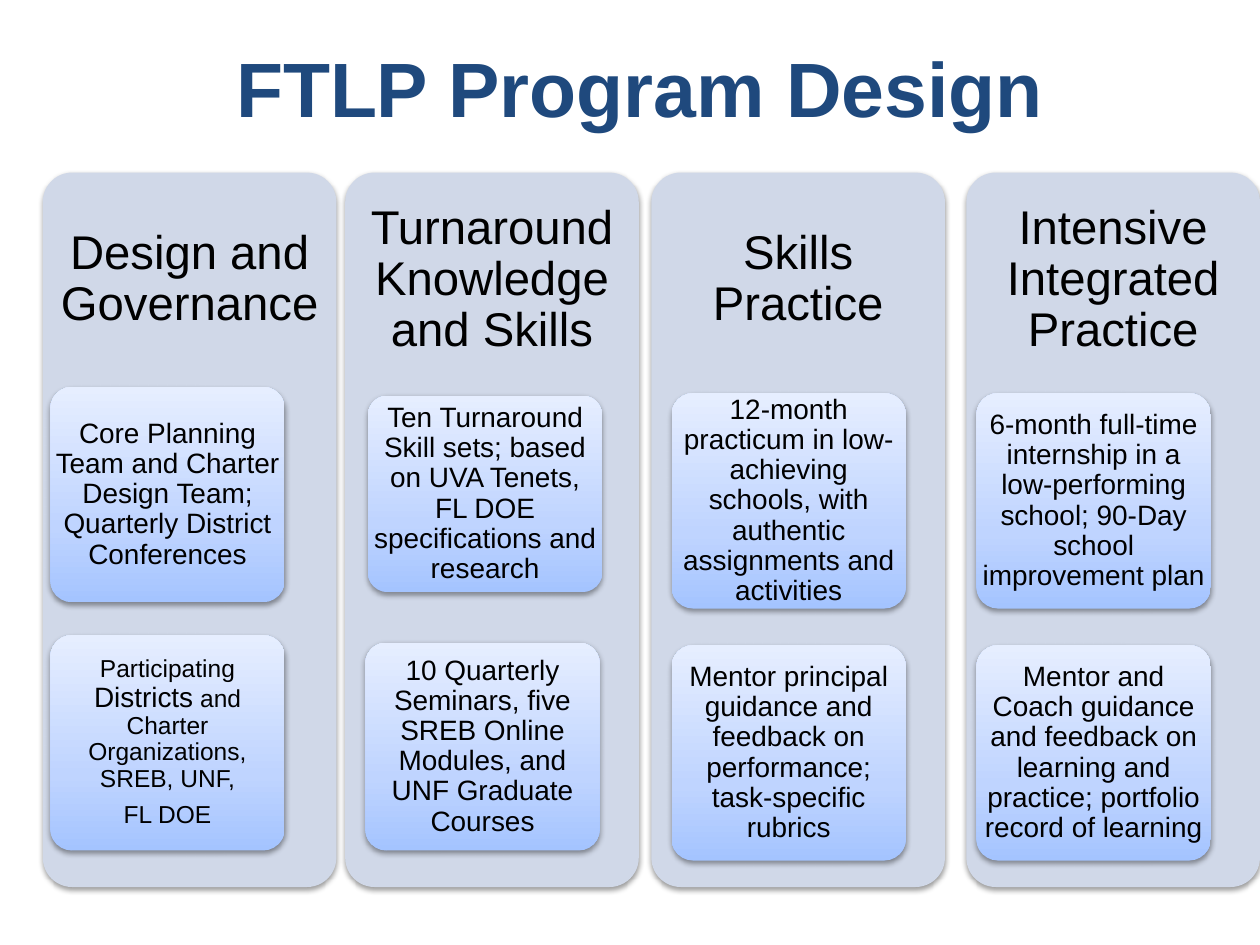
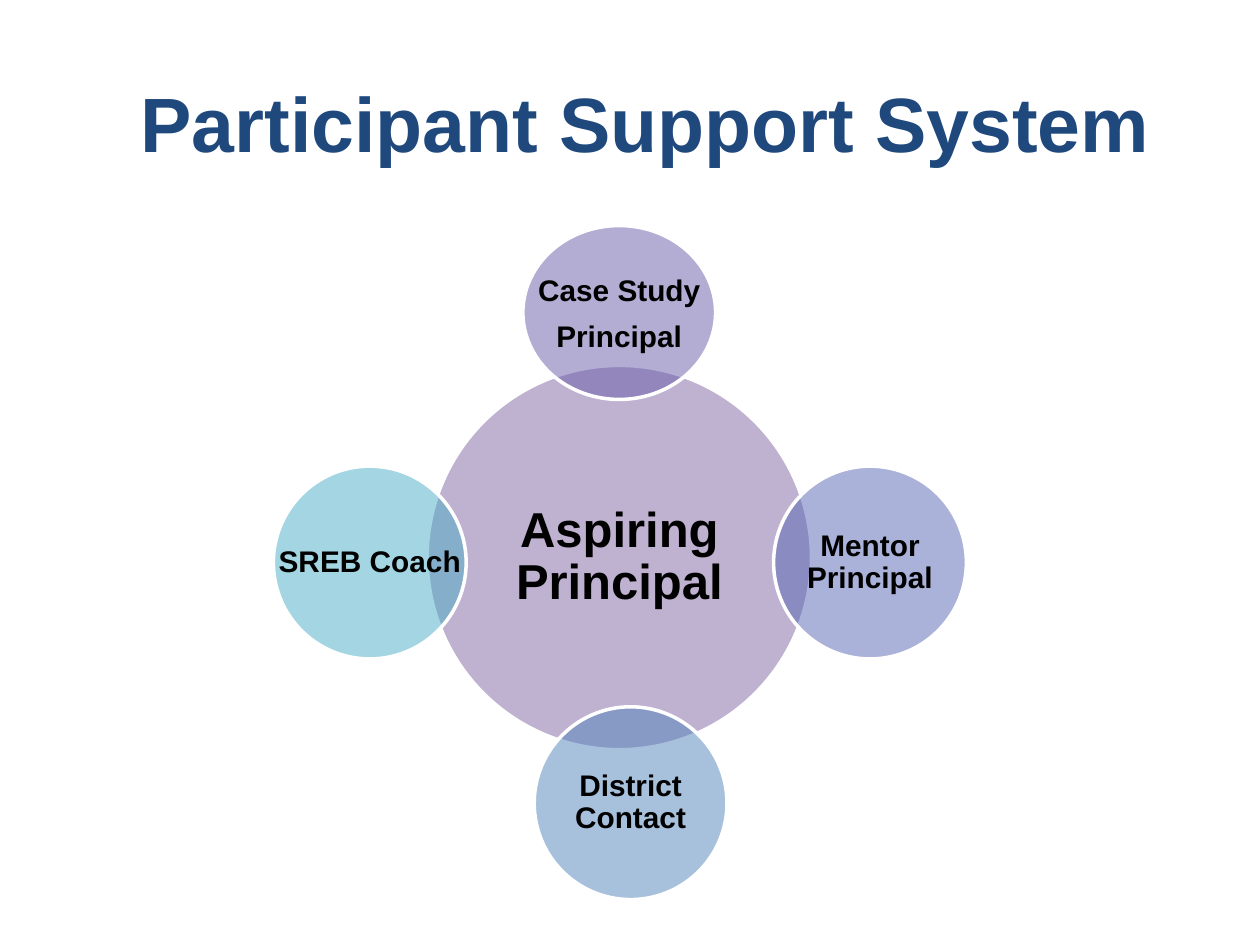
import copy
import pptx
import pptx.util
import pptx.dml.color
import pptx.enum.shapes
import pptx.enum.text
import pptx.oxml.ns
from lxml import etree

Pt = pptx.util.Pt
SHAPE = pptx.enum.shapes.MSO_SHAPE
GRID_COLUMNS, GRID_ROWS = 100, 75


def color(hex_text):
    return pptx.dml.color.RGBColor.from_string(hex_text)


def child(parent, tag, **attributes):
    return etree.SubElement(parent, pptx.oxml.ns.qn(tag), attributes)


class Deck:
    FONT = "Arial"
    NAVY, BLACK, WHITE = "1F497D", "000000", "FFFFFF"
    PANEL = "D0D8E8"
    CARD_STOPS = ((0, "A4C4FF"), (0.35, "BFD4FF"), (1, "E6EEFF"))

    def __init__(self):
        self.show = pptx.Presentation()
        self.show.slide_width = pptx.util.Inches(10)
        self.show.slide_height = pptx.util.Inches(7.5)
        self.slide = None

    def place(self, left, top, width, height):
        column = self.show.slide_width / GRID_COLUMNS
        row = self.show.slide_height / GRID_ROWS
        return round(left * column), round(top * row), round(width * column), round(height * row)

    def style(self, font, size, hex_text, bold=False):
        font.name, font.size, font.bold = self.FONT, Pt(size), bold
        font.color.rgb = color(hex_text)

    def titled_slide(self, wording, area):
        self.slide = self.show.slides.add_slide(self.show.slide_layouts[5])
        title = self.slide.shapes.title
        title.left, title.top, title.width, title.height = self.place(*area)
        title.text_frame.text = wording
        title.text_frame.vertical_anchor = pptx.enum.text.MSO_ANCHOR.MIDDLE
        heading = title.text_frame.paragraphs[0]
        heading.alignment = pptx.enum.text.PP_ALIGN.CENTER
        self.style(heading.font, 44, self.NAVY, True)

    def label(self, area, wording, size, inset, bold=False, spacing=0.9):
        frame = self.slide.shapes.add_textbox(*self.place(*area)).text_frame
        frame.word_wrap = True
        frame.vertical_anchor = pptx.enum.text.MSO_ANCHOR.MIDDLE
        frame.margin_left = frame.margin_right = pptx.util.Inches(inset[0])
        frame.margin_top = frame.margin_bottom = pptx.util.Inches(inset[1])
        for number, content in enumerate([wording] if isinstance(wording, str) else wording):
            line = frame.add_paragraph() if number else frame.paragraphs[0]
            line.alignment = pptx.enum.text.PP_ALIGN.CENTER
            line.line_spacing = spacing
            line.space_after = Pt(0)
            after = line._p.pPr.find(pptx.oxml.ns.qn("a:spcAft"))
            after.clear()
            child(after, "a:spcPct", val="35000")
            if isinstance(content, str):
                line.text = content
                self.style(line.font, size, self.BLACK, bold)
                continue
            for words, run_size in content:
                run = line.add_run()
                run.text = words
                self.style(run.font, run_size, self.BLACK, bold)

    def raised_box(self, area):
        box = self.slide.shapes.add_shape(SHAPE.ROUNDED_RECTANGLE, *self.place(*area))
        box.adjustments[0] = 0.1
        box.line.fill.background()
        box.shadow.inherit = False
        effects = box._element.spPr.find(pptx.oxml.ns.qn("a:effectLst"))
        shadow = child(effects, "a:outerShdw", blurRad="40000", dist="20000",
                       dir="5400000", rotWithShape="0")
        child(child(shadow, "a:srgbClr", val=self.BLACK), "a:alpha", val="38000")
        return box

    def panel(self, area, heading):
        box = self.raised_box(area)
        box.fill.solid()
        box.fill.fore_color.rgb = color(self.PANEL)
        left, top, width, height = area
        self.label((left, top, width, 0.3 * height), heading, 27, (0.11, 0.11))

    def card(self, area, wording):
        fill = self.raised_box(area).fill
        fill.gradient()
        fill.gradient_angle = 90
        stops = fill._fill._gradFill.gsLst
        stops.append(copy.deepcopy(stops[0]))
        for stop, (position, hex_text) in zip(fill.gradient_stops, self.CARD_STOPS):
            stop.position = position
            stop.color.rgb = color(hex_text)
        self.label(area, wording, 16, (0.04, 0.03))

    def circle(self, area, hex_text, wording, size, inset, spacing=0.9):
        disc = self.slide.shapes.add_shape(SHAPE.OVAL, *self.place(*area))
        disc.shadow.inherit = False
        disc.fill.solid()
        disc.fill.fore_color.rgb = color(hex_text)
        tint = disc._element.spPr.find(".//" + pptx.oxml.ns.qn("a:srgbClr"))
        child(tint, "a:alpha", val="50000")
        disc.line.color.rgb = color(self.WHITE)
        disc.line.width = Pt(2)
        self.label(area, wording, size, (inset, inset), True, spacing)


PROGRAM = [
    (3.4, "Design and Governance", [
        (4, 30.7, 17.1, "Core Planning Team and Charter Design Team; Quarterly District Conferences"),
        (4, 50.4, 17.1, [
            [("Participating ", 14), ("Districts", 16),
             (" and Charter Organizations, SREB, UNF,", 14)],
            [("FL DOE", 14)]])]),
    (27.4, "Turnaround Knowledge and Skills", [
        (29.2, 31.4, 15.6, "Ten Turnaround Skill sets; based on UVA Tenets, FL DOE specifications and research"),
        (29, 51, 16.5, "10 Quarterly Seminars, five SREB Online Modules, and UNF Graduate Courses")]),
    (51.7, "Skills\nPractice", [
        (53.3, 31.2, 17.1, "12-month practicum in low-achieving schools, with authentic assignments and activities"),
        (53.3, 51.2, 17.1, "Mentor principal guidance and feedback on performance; task-specific rubrics")]),
    (76.7, "Intensive Integrated Practice", [
        (77.5, 31.2, 17.1, "6-month full-time internship in a low-performing school; 90-Day school improvement plan"),
        (77.5, 51.2, 17.1, "Mentor and Coach guidance and feedback on learning and practice; portfolio record of learning")]),
]

SUPPORTERS = [
    ((41.5, 17.9, 15.3, 13.8), "685DAB", ["Case Study", "Principal"], 1),
    ((61.4, 37, 15.3, 15.3), "5767B4", "Mentor Principal", 0.9),
    ((42.4, 56.1, 15.3, 15.3), "5185BD", "District Contact", 0.9),
    ((21.7, 37, 15.3, 15.3), "4BACC6", "SREB Coach", 0.9),
]


def main():
    deck = Deck()

    deck.titled_slide("FTLP Program Design", (5.8, 0, 90, 13.7))
    for panel_left, heading, cards in PROGRAM:
        deck.panel((panel_left, 13.7, 23.3, 56.7), heading)
        for left, top, height, wording in cards:
            deck.card((left, top, 18.6, height), wording)

    deck.titled_slide("Participant Support System", (8.7, 3.4, 85.1, 12.5))
    deck.circle((33.9, 29, 30.5, 30.5), "8064A2", "Aspiring Principal", 28, 0.04)
    for area, tint, supporter, spacing in SUPPORTERS:
        deck.circle(area, tint, supporter, 17, 0.02, spacing)

    deck.show.save("out.pptx")


if __name__ == "__main__":
    main()
